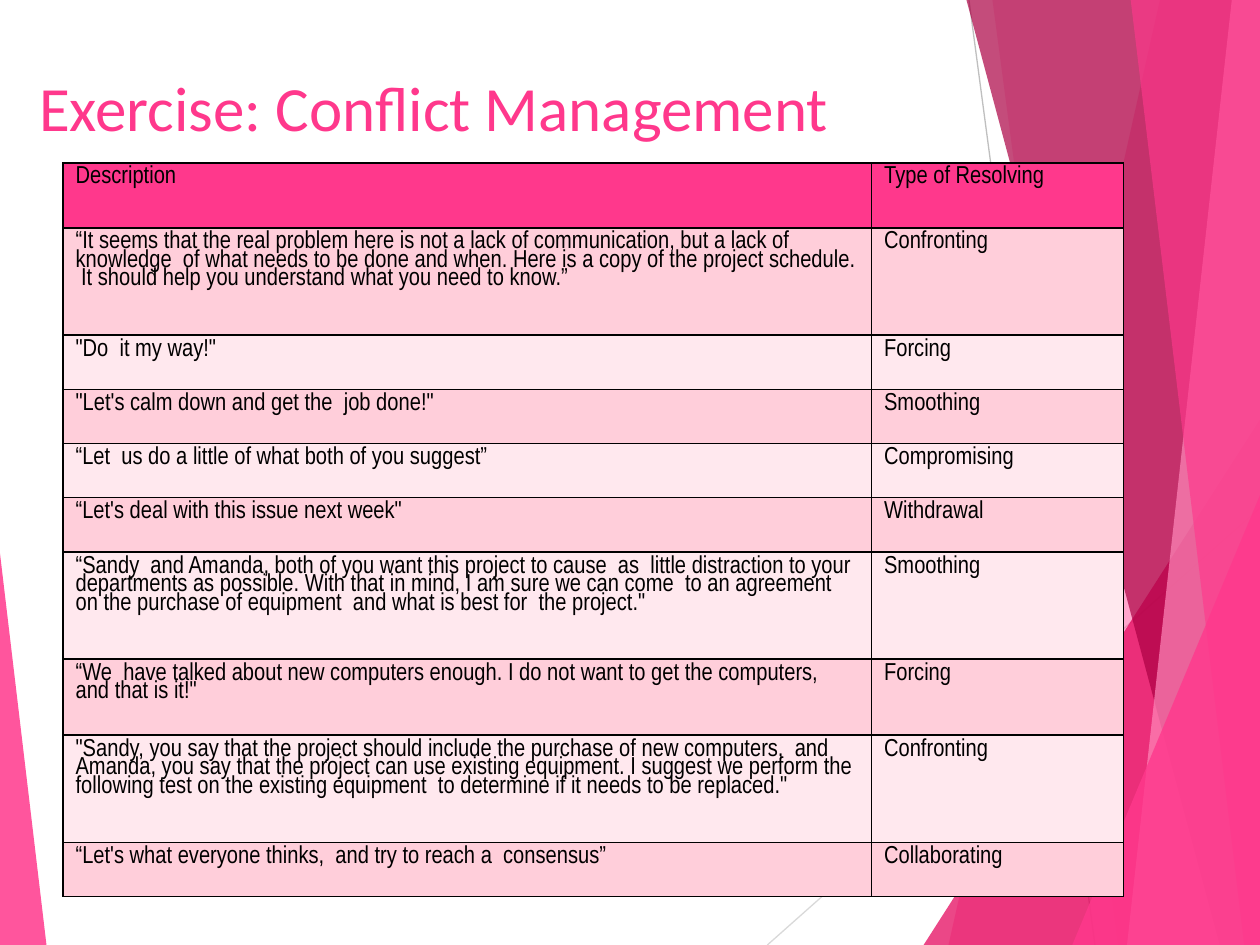
import pptx
import pptx.util
import pptx.dml.color
import pptx.enum.shapes
import pptx.enum.text
import pptx.oxml
import pptx.oxml.ns

Pt = pptx.util.Pt
PINK = "FF388C"
ROSE = "FFCEDA"
BLUSH = "FFE8EE"
BLACK = "000000"
WIDTH, HEIGHT = 720, 540


def color(value):
    return pptx.dml.color.RGBColor.from_string(value)


def write(frame, text, font, size, fill, spacing=1.0):
    frame.word_wrap = True
    para = frame.paragraphs[0]
    para.alignment = pptx.enum.text.PP_ALIGN.LEFT
    para.line_spacing = spacing
    span = para.add_run()
    span.text = text
    span.font.name = font
    span.font.size = Pt(size)
    span.font.bold = False
    span.font.color.rgb = color(fill)


def add_element(parent, tag, **attributes):
    element = pptx.oxml.parse_xml(f"<a:{tag} {pptx.oxml.ns.nsdecls('a')}/>")
    for name, value in attributes.items():
        element.set(name, str(value))
    parent.append(element)
    return element


class SlideBuilder:
    title_font = "Calibri"
    table_font = "Arial Narrow"

    def __init__(self, deck):
        self.page = deck.slides.add_slide(deck.slide_layouts[5])
        self.shapes = self.page.shapes

    def line(self, start, end, stroke):
        line = self.shapes.add_connector(
            pptx.enum.shapes.MSO_CONNECTOR.STRAIGHT, *map(Pt, start + end))
        line.line.color.rgb = color(stroke)
        line.line.width = Pt(0.75)
        add_element(line.element.spPr, "effectLst")

    def paint(self, shape, fill, opacity):
        shape.shadow.inherit = False
        shape.fill.solid()
        shape.fill.fore_color.rgb = color(fill)
        shape.line.fill.background()
        tint = shape.element.spPr.find(".//" + pptx.oxml.ns.qn("a:srgbClr"))
        add_element(tint, "alpha", val=opacity * 1000)

    def band(self, top_left, bottom_left, fill, opacity):
        outline = self.shapes.build_freeform(top_left, -0.6, scale=12700)
        outline.add_line_segments(
            [(WIDTH, -0.6), (WIDTH, HEIGHT), (bottom_left, HEIGHT)])
        self.paint(outline.convert_to_shape(), fill, opacity)

    def triangle(self, left, top, width, apex, fill, opacity):
        shape = self.shapes.add_shape(
            pptx.enum.shapes.MSO_SHAPE.ISOSCELES_TRIANGLE,
            Pt(left), Pt(top), Pt(width), Pt(HEIGHT - top))
        shape.adjustments[0] = apex
        self.paint(shape, fill, opacity)

    def title(self, text, left, top, width, height):
        box = self.shapes.title
        box.left, box.top, box.width, box.height = map(Pt, (left, top, width, height))
        box.element.getparent().append(box.element)
        frame = box.text_frame
        frame.auto_size = pptx.enum.text.MSO_AUTO_SIZE.NONE
        frame.vertical_anchor = pptx.enum.text.MSO_ANCHOR.TOP
        frame.margin_top = Pt(5.5)
        write(frame, text, self.title_font, 36, PINK)

    def border(self, cell):
        properties = cell._tc.get_or_add_tcPr()
        for side in ("lnL", "lnR", "lnT", "lnB"):
            edge = add_element(properties, side, w=Pt(1))
            add_element(add_element(edge, "solidFill"), "srgbClr", val=BLACK)

    def table(self, rows, left, top, widths, heights):
        table = self.shapes.add_table(
            len(rows), len(widths), Pt(left), Pt(top),
            Pt(sum(widths)), Pt(sum(heights))).table
        for column, width in zip(table.columns, widths):
            column.width = Pt(width)
        for index, (row, height) in enumerate(zip(rows, heights)):
            table.rows[index].height = Pt(height)
            fill = PINK if index == 0 else (BLUSH, ROSE)[index % 2]
            for cell, text in zip(table.rows[index].cells, row):
                self.border(cell)
                cell.fill.solid()
                cell.fill.fore_color.rgb = color(fill)
                write(cell.text_frame, text, self.table_font, 14, BLACK, spacing=0.8)


ROWS = [
    ("Description", "Type of Resolving"),
    ("“It seems that the real problem here is not a lack of communication, "
     "but a lack of knowledge  of what needs to be done and when. Here is a copy "
     "of the project schedule.  It should help you understand what you need to know.”",
     "Confronting"),
    ('"Do  it my way!"', "Forcing"),
    ('"Let\'s calm down and get the  job done!"', "Smoothing"),
    ("“Let  us do a little of what both of you suggest”", "Compromising"),
    ("“Let's deal with this issue next week\"", "Withdrawal"),
    ("“Sandy  and Amanda, both of you want this project to cause  as  little "
     "distraction to your departments as possible. With that in mind, I am sure we "
     "can come  to an agreement  on the purchase of equipment  and what is best "
     'for  the project."', "Smoothing"),
    ("“We  have talked about new computers enough. I do not want to get the "
     'computers,  and that is it!"', "Forcing"),
    ('"Sandy, you say that the project should include the purchase of new '
     "computers,  and Amanda, you say that the project can use existing equipment. "
     "I suggest we perform the following test on the existing equipment  to "
     'determine if it needs to be replaced."', "Confronting"),
    ("“Let's what everyone thinks,  and try to reach a  consensus”", "Collaborating"),
]
SHORT, MEDIUM, TALL = 31, 43.4, 61.3
HEIGHTS = [37.2, TALL] + [SHORT] * 4 + [TALL, MEDIUM, TALL, SHORT]


def main():
    deck = pptx.Presentation()
    deck.slide_width, deck.slide_height = Pt(WIDTH), Pt(HEIGHT)
    slide = SlideBuilder(deck)
    slide.line((553.7, 0), (625.7, HEIGHT), "BFBFBF")
    slide.line((WIDTH, 290.2), (438.5, HEIGHT), "D9D9D9")
    slide.band(663.1, 542.2, PINK, 30)
    slide.band(567.4, 638.6, PINK, 20)
    slide.triangle(527.8, 239.8, 192.2, 1, "E40059", 72)
    slide.band(551.5, 697, "AB0043", 70)
    slide.band(704.2, 643.7, "FF88BA", 70)
    slide.band(645.8, 711.4, PINK, 65)
    slide.triangle(612.7, 283, 107.3, 1, PINK, 80)
    slide.triangle(0, 316.1, 26.6, 0, PINK, 85)
    slide.title("Exercise: Conflict Management", 15.1, 33.8, 599.8, 30.2)
    slide.table(ROWS, 36, 93, (462, 144), HEIGHTS)
    deck.save("out.pptx")


if __name__ == "__main__":
    main()
